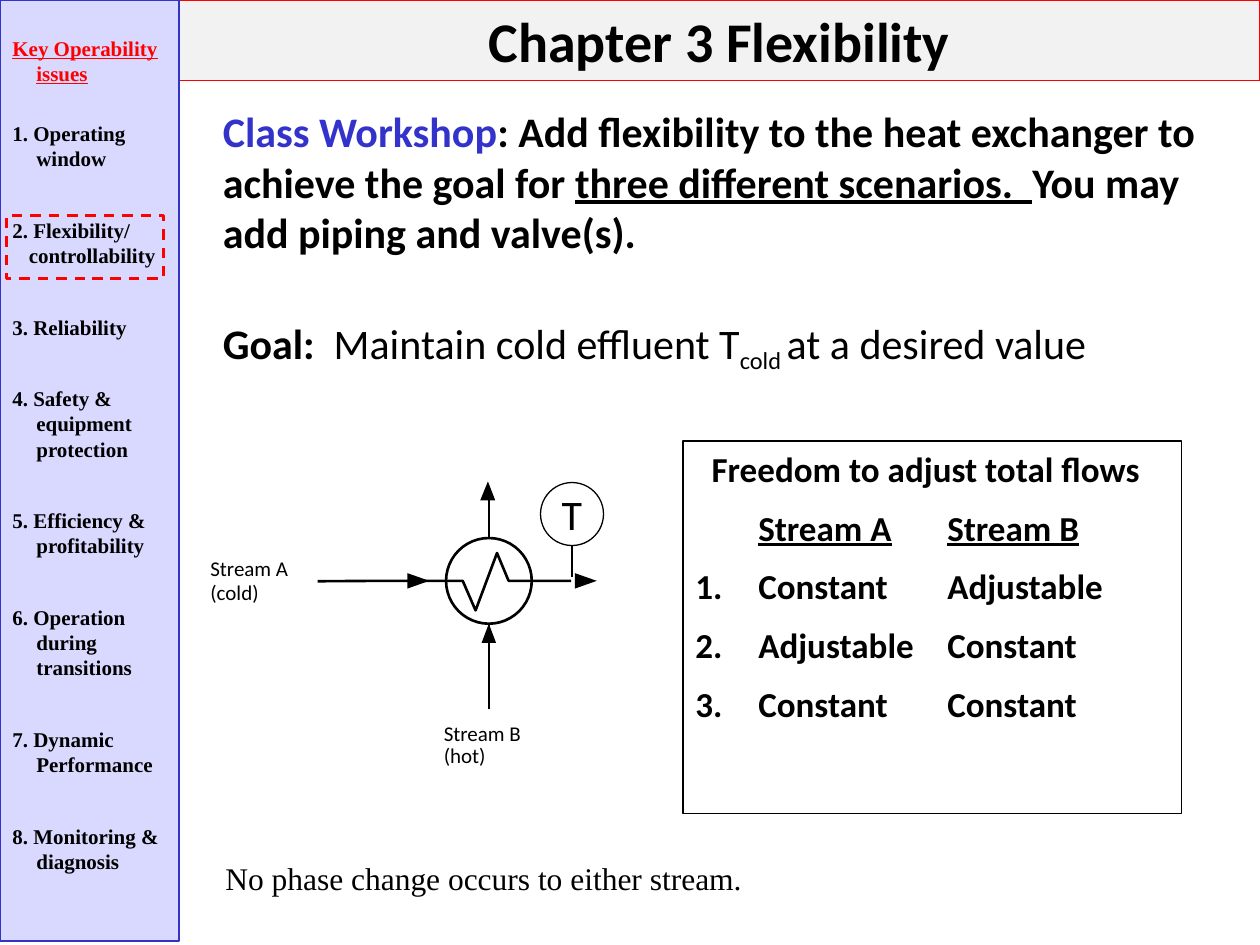
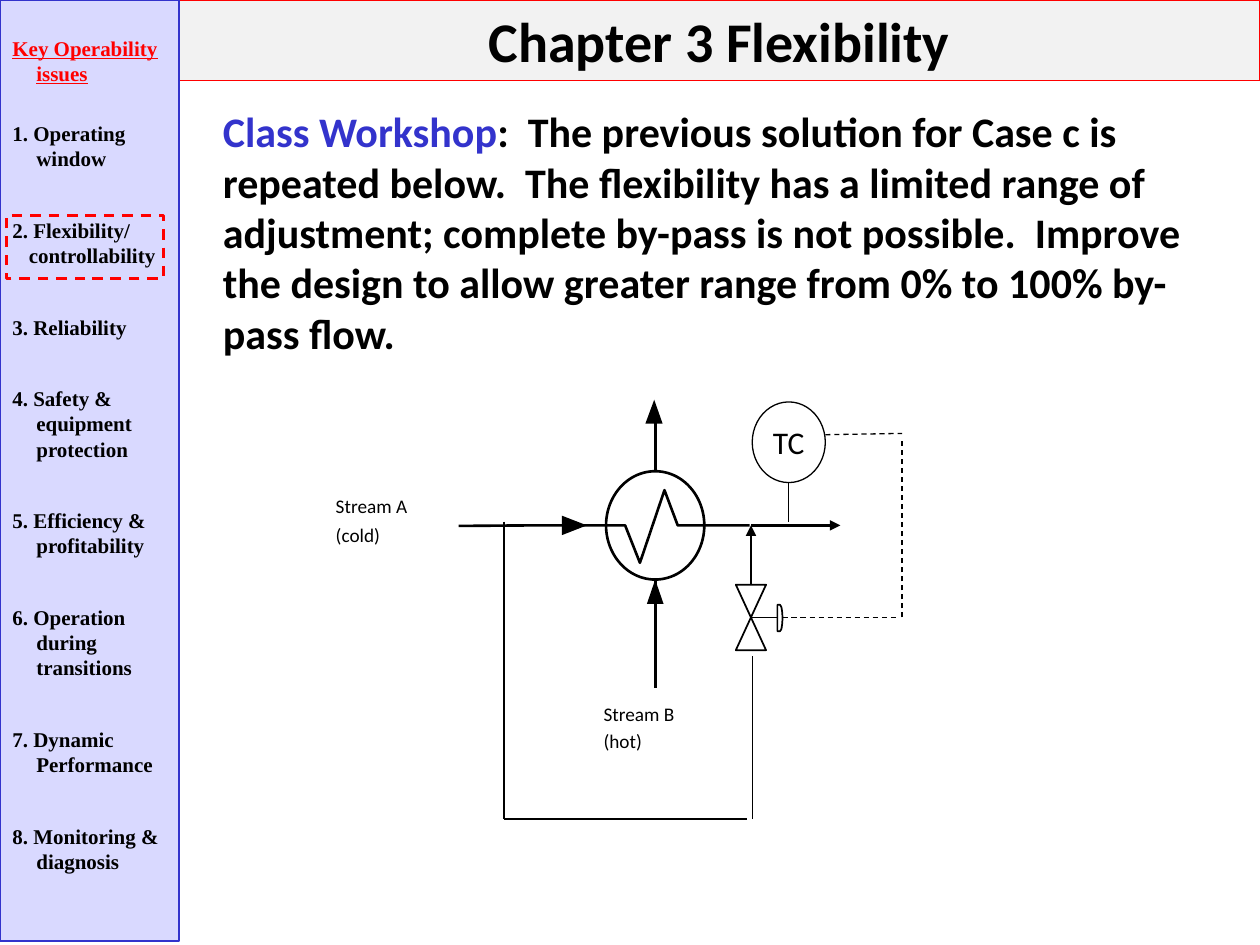
from lxml.etree import SubElement
from pptx import Presentation
from pptx.dml.color import RGBColor
from pptx.enum.dml import MSO_LINE
from pptx.enum.shapes import MSO_CONNECTOR, MSO_SHAPE
from pptx.enum.text import MSO_ANCHOR, MSO_AUTO_SIZE, PP_ALIGN
from pptx.oxml.ns import qn
from pptx.util import Inches, Pt

# ---- Shared look ----
COLOURS = {"ink": "000000", "paper": "FFFFFF", "accent": "3333CC",
           "alert": "FF0000", "sidebar": "D9D9FF", "band": "F2F2F2"}
SANS, SERIF = "Calibri", "Times New Roman"
SLIDE_W, SLIDE_H = 10, 7.5
SIDEBAR_W, BAND_H = 1.42, 0.64
TEXT_LEFT, TEXT_TOP, TEXT_W = 1.67, 0.79, 8.08
THIN, MEDIUM, THICK = 0.75, 1, 1.5

# ---- Content: a paragraph is a list of (text, style words) ----
CHAPTER = "Chapter 3 Flexibility"
ISSUES_HEADING = "Key Operability issues"
ISSUES = ["1. Operating window", "2. Flexibility/", "3. Reliability",
          "4. Safety & equipment protection", "5. Efficiency & profitability",
          "6. Operation during transitions", "7. Dynamic Performance",
          "8. Monitoring & diagnosis"]
ISSUE_ENDINGS = {"2. Flexibility/": "controllability"}

SCENARIO_TASK = [
    ("Class Workshop", "bold accent"),
    (": Add flexibility to the heat exchanger to achieve the goal for ", "bold"),
    ("three different scenarios.  ", "bold underline"),
    ("You may add piping and valve(s).", "bold")]
GOAL = [("Goal:", "bold"), ("  Maintain cold effluent T", ""),
        ("cold ", "subscript"), ("at a desired value", "")]
NOTE = [("No phase change occurs to either stream.", "")]
FREEDOM_HEADING = "Freedom to adjust total flows"
FREEDOM_COLUMNS = ("Stream A", "Stream B")
FREEDOM_CASES = [("Constant", "Adjustable"), ("Adjustable", "Constant"),
                 ("Constant", "Constant")]
BYPASS_TASK = [
    ("Class Workshop", "bold accent"),
    (":  The previous solution for Case c is repeated below.  The flexibility "
     "has a limited range of adjustment; complete by-pass is not possible.  "
     "Improve the design to allow greater range from 0% to 100% by-pass flow.",
     "bold")]

# ---- Heat exchanger, in radii from the centre of its circle ----
COIL = [(1.92, 0), (0.46, 0), (0.19, -0.65), (-0.31, 0.69), (-0.61, 0),
        (-2.52, 0), (-4, 0.01)]
HOT_PIPES = [((0, 3), (0, 1)), ((0, -1), (0, -1.95))]
FLOW_HEADS = [[(0, 1), (-0.17, 1.45), (0.17, 1.45)],
              [(-1.9, 0.18), (-1.9, -0.18), (-1.39, 0)],
              [(-0.02, -2.32), (-0.2, -1.88), (0.15, -1.88)]]
OUTLET_HEAD = [(2.01, 0.18), (2.01, -0.18), (2.52, 0)]
STREAM_LABELS = [("Stream A", -6.5, -0.58), ("(cold)", -6.5, -0.04),
                 ("Stream B", -1.05, 3.27), ("(hot)", -1.05, 3.77)]


def colour(name):
    return RGBColor.from_string(COLOURS[name])


def paint(shape, fill=None, line=None, weight=THIN, dash=None):
    """Give a shape its fill and outline, without a shadow."""
    shape.shadow.inherit = False
    if fill:
        shape.fill.solid()
        shape.fill.fore_color.rgb = colour(fill)
    else:
        shape.fill.background()
    if line:
        shape.line.color.rgb = colour(line)
        shape.line.width = Pt(weight)
        if dash:
            shape.line.dash_style = dash
    else:
        shape.line.fill.background()
    return shape


def add_preset(slide, kind, left, top, width, height, **look):
    shape = slide.shapes.add_shape(kind, Inches(left), Inches(top),
                                   Inches(width), Inches(height))
    return paint(shape, **look)


def add_outline(slide, points, close=True, **look):
    corners = [(Inches(x), Inches(y)) for x, y in points]
    builder = slide.shapes.build_freeform(*corners[0], scale=1.0)
    builder.add_line_segments(corners[1:], close=close)
    return paint(builder.convert_to_shape(), **look)


def add_line(slide, start, end, weight=THIN, dashed=False, arrow=False):
    line = slide.shapes.add_connector(
        MSO_CONNECTOR.STRAIGHT, *(Inches(v) for v in (*start, *end)))
    line.line.color.rgb = colour("ink")
    line.line.width = Pt(weight)
    if dashed:
        line.line.dash_style = MSO_LINE.DASH
    properties = line._element.spPr
    if arrow:
        SubElement(properties.find(qn("a:ln")), qn("a:tailEnd"), type="triangle")
    SubElement(properties, qn("a:effectLst"))


def set_paragraph(paragraph, runs, size, font=SANS, before=0, left=0, hang=0,
                  tabs=(), align=PP_ALIGN.LEFT):
    paragraph.alignment = align
    paragraph.space_before = Pt(before)
    properties = paragraph._p.get_or_add_pPr()
    properties.set("marL", str(Inches(left)))
    properties.set("indent", str(Inches(-hang)))
    if tabs:
        tab_list = SubElement(properties, qn("a:tabLst"))
        for stop in tabs:
            SubElement(tab_list, qn("a:tab"), pos=str(Inches(stop)), algn="l")
    for text, style in runs:
        run = paragraph.add_run()
        run.text = text
        run.font.size, run.font.name = Pt(size), font
        run.font.bold = "bold" in style
        run.font.underline = "underline" in style
        hue = next((c for c in ("accent", "alert") if c in style), "ink")
        run.font.color.rgb = colour(hue)
        if "subscript" in style:
            run._r.get_or_add_rPr().set("baseline", "-25000")


def set_frame(shape, paragraphs, anchor=MSO_ANCHOR.TOP, wrap=True):
    """Fill a shape with (runs, format) paragraphs."""
    frame = shape.text_frame
    frame.word_wrap, frame.vertical_anchor = wrap, anchor
    frame.auto_size = MSO_AUTO_SIZE.NONE
    for i, (runs, form) in enumerate(paragraphs):
        paragraph = frame.add_paragraph() if i else frame.paragraphs[0]
        set_paragraph(paragraph, runs, **form)
    return frame


def add_text(slide, runs, left, top, width, height, inset=True, **form):
    box = slide.shapes.add_textbox(Inches(left), Inches(top),
                                   Inches(width), Inches(height))
    frame = set_frame(box, [(runs, form)])
    if not inset:
        frame.margin_left = frame.margin_right = 0
        frame.margin_top = frame.margin_bottom = 0


def add_sidebar(slide):
    sidebar = add_preset(slide, MSO_SHAPE.RECTANGLE, 0, 0, SIDEBAR_W, 7.47,
                         fill="sidebar", line="accent")
    form = {"size": 12, "font": SERIF, "left": 0.19, "hang": 0.19}
    paragraphs = [([(ISSUES_HEADING, "bold underline alert")], form)]
    for i, issue in enumerate(ISSUES):
        paragraphs.append(([(issue, "bold")],
                           {**form, "before": 26.5 if i else 20}))
        if issue in ISSUE_ENDINGS:
            paragraphs.append(([(ISSUE_ENDINGS[issue], "bold")],
                               {**form, "left": 0.13, "hang": 0}))
    frame = set_frame(sidebar, paragraphs)
    frame.margin_top = Inches(0.28)
    for paragraph in frame.paragraphs:
        paragraph.line_spacing = Pt(14.4)
    # Marker around the current issue
    add_preset(slide, MSO_SHAPE.RECTANGLE, 0.05, 1.71, 1.25, 0.5,
               line="alert", weight=THICK, dash=MSO_LINE.DASH)


def add_chapter_slide(deck, task, task_height):
    slide = deck.slides.add_slide(deck.slide_layouts[5])
    add_sidebar(slide)
    band = slide.shapes.title
    band.left, band.top = Inches(SIDEBAR_W), 0
    band.width, band.height = Inches(SLIDE_W - SIDEBAR_W), Inches(BAND_H)
    # A placeholder has no shadow setting of its own
    band.fill.solid()
    band.fill.fore_color.rgb = colour("band")
    band.line.color.rgb = colour("alert")
    band.line.width = Pt(THIN)
    set_frame(band, [([(CHAPTER, "bold")],
                      {"size": 32, "align": PP_ALIGN.CENTER})])
    add_text(slide, task, TEXT_LEFT, TEXT_TOP, TEXT_W, task_height, size=24)
    return slide


def add_exchanger(slide, centre, radii, label_size, outlet=False):
    def place(points):
        return [(centre[0] + x * radii[0], centre[1] + y * radii[1])
                for x, y in points]

    add_outline(slide, place(COIL), close=False, line="ink", weight=THICK)
    for pipe in HOT_PIPES:
        add_line(slide, *place(pipe), weight=THICK)
    (left, top), = place([(-1, -1)])
    add_preset(slide, MSO_SHAPE.OVAL, left, top, 2 * radii[0], 2 * radii[1],
               line="ink", weight=THICK)
    for head in FLOW_HEADS + ([OUTLET_HEAD] if outlet else []):
        add_outline(slide, place(head), fill="ink")
    for label, x, y in STREAM_LABELS:
        (left, top), = place([(x, y)])
        add_text(slide, [(label, "")], left, top, 1, 0.2, inset=False,
                 size=label_size)


def add_instrument(slide, tag, left, top, width, height, size, pipe_y):
    bubble = add_preset(slide, MSO_SHAPE.OVAL, left, top, width, height,
                        line="ink")
    set_frame(bubble, [([(tag, "")], {"size": size, "align": PP_ALIGN.CENTER})],
              anchor=MSO_ANCHOR.MIDDLE, wrap=False)
    middle = left + width / 2
    add_line(slide, (middle, top + height), (middle, pipe_y))


def add_freedom_box(slide):
    box = add_preset(slide, MSO_SHAPE.RECTANGLE, 5.42, 3.5, 3.96, 2.96,
                     line="ink")
    later = {"size": 20, "before": 9.6}
    paragraphs = [([(FREEDOM_HEADING, "bold")], {"size": 20, "left": 0.13}),
                  ([("\t", ""), ("\t".join(FREEDOM_COLUMNS), "bold underline")],
                   {**later, "tabs": (0.19, 2)})]
    for number, flows in enumerate(FREEDOM_CASES, 1):
        row = "\t".join((f"{number}.", *flows))
        paragraphs.append(([(row, "bold")], {**later, "tabs": (0.4, 2)}))
    set_frame(box, paragraphs)


def add_bypass(slide):
    feed_x, valve_x, outlet_x, signal_x = 4, 5.96, 6.67, 7.16
    pipe_y, valve_y, return_y = 4.17, 4.9, 6.5
    half_w, half_h = 0.12, 0.26
    # Outlet and by-pass piping
    add_line(slide, (valve_x, pipe_y), (outlet_x, pipe_y), THICK, arrow=True)
    add_line(slide, (feed_x, pipe_y - 0.03), (feed_x, return_y))
    add_line(slide, (feed_x, return_y), (5.93, return_y))
    add_line(slide, (5.97, return_y), (5.97, 5.21))
    add_line(slide, (valve_x, valve_y - half_h), (valve_x, pipe_y), arrow=True)
    # Control valve with its actuator
    add_outline(slide, [(valve_x + sx * half_w, valve_y + sy * half_h)
                        for sx, sy in ((1, -1), (-1, 1), (1, 1), (-1, -1))],
                fill="paper", line="ink", weight=MEDIUM)
    add_preset(slide, MSO_SHAPE.FLOWCHART_DELAY, 6.17, valve_y - 0.1, 0.04, 0.21,
               fill="paper", line="ink", weight=MEDIUM)
    add_line(slide, (valve_x, valve_y), (6.17, valve_y), MEDIUM)
    # Control signal
    for start, end in [((6.55, 3.45), (signal_x, 3.44)),
                       ((6.21, valve_y), (7.12, valve_y)),
                       ((signal_x, valve_y), (signal_x, 3.49))]:
        add_line(slide, start, end, dashed=True)


def main():
    deck = Presentation()
    deck.slide_width, deck.slide_height = Inches(SLIDE_W), Inches(SLIDE_H)

    # Slide 1: three scenarios
    scenarios = add_chapter_slide(deck, SCENARIO_TASK, 1.31)
    add_text(scenarios, GOAL, TEXT_LEFT, 2.47, 7.6, 0.5, size=24)
    add_exchanger(scenarios, (3.88, 4.61), (0.34, 0.34), 12, outlet=True)
    add_instrument(scenarios, "T", 4.29, 3.83, 0.5, 0.5, 24, 4.58)
    add_freedom_box(scenarios)
    add_text(scenarios, NOTE, 1.69, 6.77, 8.1, 0.42, size=18, font=SERIF)

    # Slide 2: by-pass with temperature control
    bypass = add_chapter_slide(deck, BYPASS_TASK, 2.12)
    add_exchanger(bypass, (5.2, 4.17), (0.39, 0.43), 11)
    add_instrument(bypass, "TC", 5.97, 3.19, 0.58, 0.64, 18, 4.14)
    add_bypass(bypass)

    deck.save("out.pptx")


if __name__ == "__main__":
    main()
